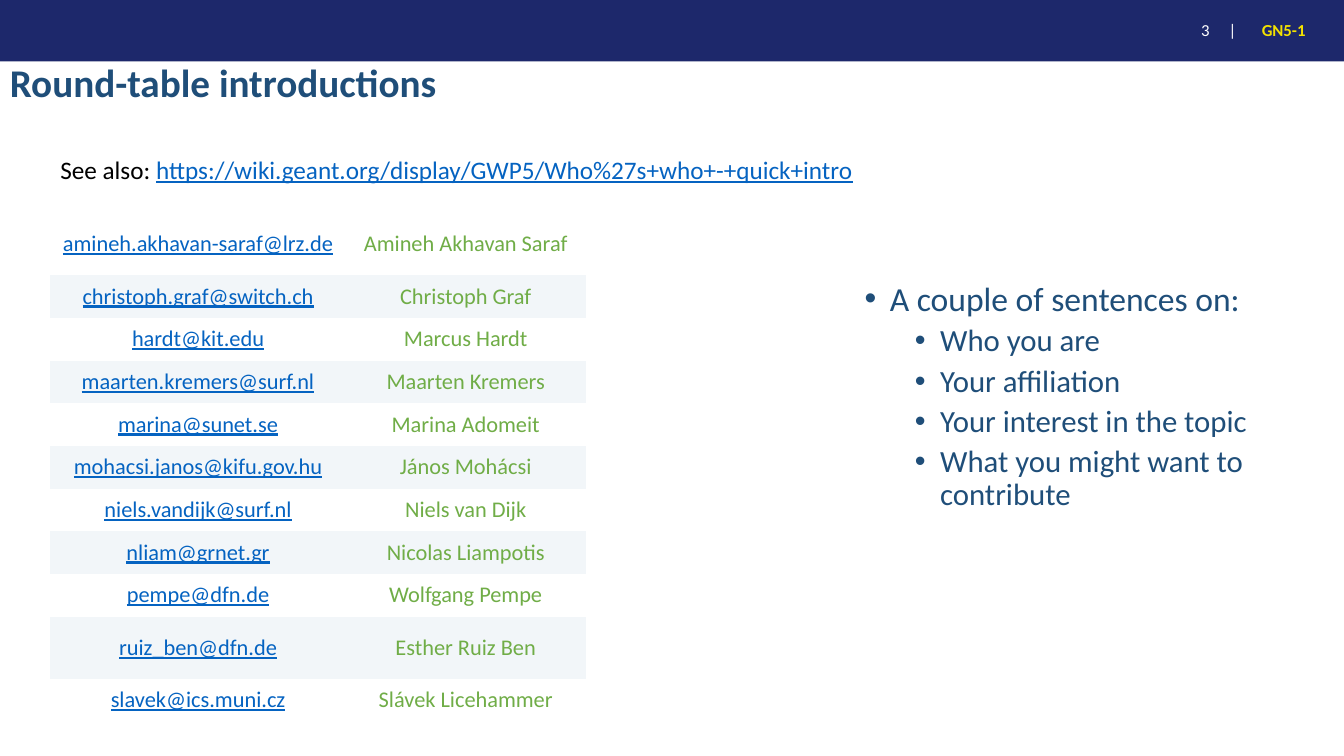
from dataclasses import dataclass

from lxml import etree
from pptx import Presentation
from pptx.dml.color import RGBColor
from pptx.enum.shapes import MSO_SHAPE
from pptx.enum.text import MSO_ANCHOR, PP_ALIGN
from pptx.oxml.ns import qn
from pptx.util import Pt

RECT = MSO_SHAPE.RECTANGLE
TOP, MIDDLE = MSO_ANCHOR.TOP, MSO_ANCHOR.MIDDLE
CENTER = PP_ALIGN.CENTER

FONT = "Calibri"
NAVY, BLUE, LINK, GREEN = "1D286B", "1F4E79", "0563C1", "70AD47"
WHITE, BAND, YELLOW, BLACK = "FFFFFF", "F2F6F9", "F4E200", "000000"
NO_STYLE = "{2D5ABB26-0587-4C30-8999-92F81FD0307C}"


@dataclass
class Person:
    email: str
    name: str
    height: float = 30.5


@dataclass
class Bullet:
    text: str
    level: int = 1
    size: float = 22
    indent: float = 54
    before: float = 5


PEOPLE = [
    Person("amineh.akhavan-saraf@lrz.de", "Amineh Akhavan Saraf", 44.6),
    Person("christoph.graf@switch.ch", "Christoph Graf"),
    Person("hardt@kit.edu", "Marcus Hardt"),
    Person("maarten.kremers@surf.nl", "Maarten Kremers"),
    Person("marina@sunet.se", "Marina Adomeit"),
    Person("mohacsi.janos@kifu.gov.hu", "János Mohácsi"),
    Person("niels.vandijk@surf.nl", "Niels van Dijk"),
    Person("nliam@grnet.gr", "Nicolas Liampotis"),
    Person("pempe@dfn.de", "Wolfgang Pempe"),
    Person("ruiz_ben@dfn.de", "Esther Ruiz Ben", 44.6),
    Person("slavek@ics.muni.cz", "Slávek Licehammer"),
]
BULLETS = [
    Bullet("A couple of sentences on:", 0, 24, 18, 0),
    Bullet("Who you are"),
    Bullet("Your affiliation"),
    Bullet("Your interest in the topic"),
    Bullet("What you might want to contribute"),
]


def rgb(color: str) -> RGBColor:
    return RGBColor.from_string(color)


def style(r, size: float, color: str, bold: bool = False, underline: bool = False) -> None:
    r.font.name = FONT
    r.font.size = Pt(size)
    r.font.color.rgb = rgb(color)
    r.font.bold = bold
    r.font.underline = underline


def add_box(s, left: float, top: float, width: float, height: float, anchor=MIDDLE):
    tf = s.shapes.add_textbox(Pt(left), Pt(top), Pt(width), Pt(height)).text_frame
    tf.word_wrap = True
    tf.vertical_anchor = anchor
    return tf


def add_line(tf, text: str, size: float, color: str, bold: bool = False):
    p = tf.paragraphs[0]
    p.text = text
    p.line_spacing = 0.9
    style(p.runs[0], size, color, bold)


def add_header(s) -> None:
    bar = s.shapes.add_shape(RECT, Pt(0), Pt(0), Pt(960), Pt(43.9))
    bar.shadow.inherit = False
    bar.fill.solid()
    bar.fill.fore_color.rgb = rgb(NAVY)
    bar.line.fill.background()

    # Page number, with a tab before the divider
    tf = add_box(s, 838, 8.6, 52.6, 25.9)
    tf.margin_left, tf.margin_right = Pt(20), Pt(0)
    p = tf.paragraphs[0]
    tabs = etree.SubElement(p._p.get_or_add_pPr(), qn("a:tabLst"))
    etree.SubElement(tabs, qn("a:tab"), pos=str(Pt(19.6)), algn="l")
    p.text = "3\t|"
    style(p.runs[0], 12, WHITE)

    add_line(add_box(s, 894.2, 10.8, 65, 23), "GN5-1", 12, YELLOW, True)


def add_bullets(s, bullets: list[Bullet]) -> None:
    tf = add_box(s, 610.5, 198, 305.3, 271.4, TOP)
    for i, bullet in enumerate(bullets):
        p = tf.add_paragraph() if i else tf.paragraphs[0]
        p.text = bullet.text
        p.level = bullet.level
        p.line_spacing = 0.9
        p.space_before = Pt(bullet.before)
        pPr = p._p.get_or_add_pPr()
        pPr.set("marL", str(Pt(bullet.indent)))
        pPr.set("indent", str(Pt(-18)))
        etree.SubElement(pPr, qn("a:buFont"), typeface="Arial")
        etree.SubElement(pPr, qn("a:buChar"), char="•")
        style(p.runs[0], bullet.size, BLUE)


def add_people(s, people: list[Person]) -> None:
    height = sum(person.height for person in people)
    frame = s.shapes.add_table(len(people), 2, Pt(36), Pt(152), Pt(382.4), Pt(height))
    table = frame.table
    table.first_row = table.horz_banding = False
    table._tbl.tblPr.find(qn("a:tableStyleId")).text = NO_STYLE
    for column, width in zip(table.columns, (211, 171.4)):
        column.width = Pt(width)
    for i, person in enumerate(people):
        table.rows[i].height = Pt(person.height)
        for j, text in enumerate((person.email, person.name)):
            cell = table.cell(i, j)
            cell.fill.solid()
            cell.fill.fore_color.rgb = rgb(BAND if i % 2 else WHITE)
            cell.vertical_anchor = MIDDLE
            cell.margin_left = cell.margin_right = Pt(2)
            cell.margin_top = cell.margin_bottom = Pt(1)
            p = cell.text_frame.paragraphs[0]
            p.text = text
            p.alignment = CENTER
            style(p.runs[0], 16, GREEN if j else LINK, underline=j == 0)


def add_see_also(s) -> None:
    p = add_box(s, 36, 106.6, 600, 29, TOP).paragraphs[0]
    p.text = "See also: "
    style(p.runs[0], 18, BLACK)
    r = p.add_run()
    r.text = "https://wiki.geant.org/display/GWP5/Who%27s+who+-+quick+intro"
    style(r, 18, LINK, underline=True)


def main() -> None:
    prs = Presentation()
    prs.slide_width, prs.slide_height = Pt(960), Pt(540)
    s = prs.slides.add_slide(prs.slide_layouts[6])

    # Header and title
    add_header(s)
    add_line(add_box(s, 0, 31, 739.4, 59), "Round-table introductions", 28, BLUE, True)

    # Content
    add_bullets(s, BULLETS)
    add_people(s, PEOPLE)
    add_see_also(s)

    prs.save("out.pptx")


if __name__ == "__main__":
    main()
